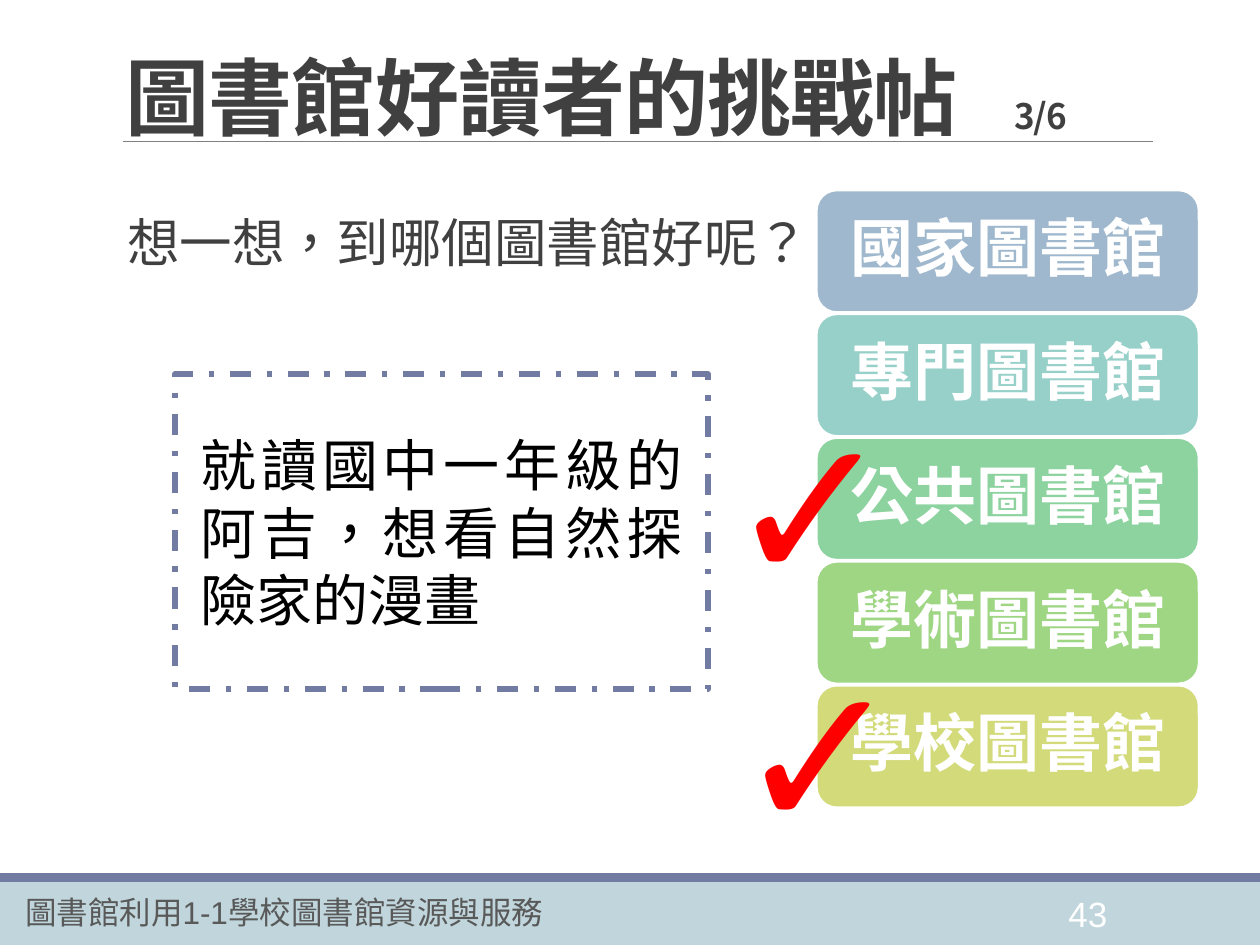
from pptx import Presentation
from pptx.dml.color import RGBColor
from pptx.enum import dml, shapes, text
from pptx.oxml.ns import qn
from pptx.util import Pt

WHITE = RGBColor(0xFF, 0xFF, 0xFF)
BLACK = RGBColor(0, 0, 0)
RED = RGBColor(0xFF, 0, 0)
INK = RGBColor(0x40, 0x40, 0x40)
FOOTER_INK = RGBColor(0x59, 0x59, 0x59)
RULE_GREY = RGBColor(0x80, 0x80, 0x80)
SLATE = RGBColor(0x72, 0x7C, 0xA3)
PALE_BLUE = RGBColor(0xC0, 0xD6, 0xDC)

SANS = "Arial"
CJK = "Noto Sans CJK SC"
INSETS = (7.2, 3.6, 7.2, 3.6)

LIBRARIES = [
    ("國家圖書館", RGBColor(0x9F, 0xB8, 0xCD)),
    ("專門圖書館", RGBColor(0x96, 0xD0, 0xC8)),
    ("公共圖書館", RGBColor(0x8D, 0xD3, 0xA0)),
    ("學術圖書館", RGBColor(0x9E, 0xD6, 0x84)),
    ("學校圖書館", RGBColor(0xD2, 0xDA, 0x7A)),
]
BUTTON_TOP, BUTTON_STEP = 108.7, 70.75
CHECK_MARKS = [(413.3, 355.7), (408.2, 213.8)]


def style_span(span, size, color, font=SANS, bold=False):
    span.font.size = Pt(size)
    span.font.color.rgb = color
    span.font.name = font
    span.font.bold = bold
    # Traditional Chinese punctuation sits in the middle of its square
    span.font._element.set("lang", "zh-TW")
    east_asian = span.font._element.makeelement(qn("a:ea"), {"typeface": font})
    span.font._element.find(qn("a:latin")).addnext(east_asian)


def fill_text(shape, words, size, color, font=SANS, bold=False, spacing=None,
              align=text.PP_ALIGN.LEFT, anchor=text.MSO_ANCHOR.TOP, insets=INSETS):
    frame = shape.text_frame
    frame.word_wrap = True
    frame.vertical_anchor = anchor
    (frame.margin_left, frame.margin_top,
     frame.margin_right, frame.margin_bottom) = map(Pt, insets)
    frame.text = words
    para = frame.paragraphs[0]
    para.alignment = align
    if spacing:
        para.line_spacing = spacing
    style_span(para.runs[0], size, color, font, bold)


def add_text(page, place, words, size, color, **options):
    box = page.shapes.add_textbox(*map(Pt, place))
    fill_text(box, words, size, color, **options)
    return box


def add_block(page, place, fill, kind=shapes.MSO_SHAPE.RECTANGLE, line=None, width=0):
    block = page.shapes.add_shape(kind, *map(Pt, place))
    block.shadow.inherit = False
    block.fill.solid()
    block.fill.fore_color.rgb = fill
    if line is None:
        block.line.fill.background()
    else:
        block.line.color.rgb = line
        block.line.width = Pt(width)
    return block


def add_rule(page, left, right, top):
    rule = page.shapes.add_connector(
        shapes.MSO_CONNECTOR.STRAIGHT, Pt(left), Pt(top), Pt(right), Pt(top))
    rule.line.color.rgb = RULE_GREY
    rule.line.width = Pt(0.5)
    properties = rule._element.spPr
    properties.append(properties.makeelement(qn("a:effectLst"), {}))


def add_title(page, words, counter):
    box = add_text(page, (64.8, 28.8, 594, 58.3), words, 48, INK, font=CJK, bold=True,
                   spacing=0.85, anchor=text.MSO_ANCHOR.BOTTOM)
    para = box.text_frame.paragraphs[0]
    # The tab stop sets the counter apart from the heading
    properties = para._p.get_or_add_pPr()
    tabs = properties.makeelement(qn("a:tabLst"), {})
    tabs.append(tabs.makeelement(qn("a:tab"), {"pos": str(Pt(507.6)), "algn": "l"}))
    properties.append(tabs)
    span = para.add_run()
    span.text = "\t" + counter
    style_span(span, 20, INK, CJK, True)
    for span in para.runs:
        span.font._element.set("spc", "-50")


def add_button(page, place, words, color):
    button = add_block(page, place, color, shapes.MSO_SHAPE.ROUNDED_RECTANGLE, WHITE, 1.25)
    fill_text(button, words, 36, WHITE, bold=True, spacing=0.9,
              align=text.PP_ALIGN.CENTER, anchor=text.MSO_ANCHOR.MIDDLE, insets=(10.8,) * 4)


def add_check(page, left, top):
    check = add_text(page, (left, top, 105.8, 146.9), "✓", 115, RED, bold=True)
    check.text_frame.word_wrap = False
    check.text_frame.auto_size = text.MSO_AUTO_SIZE.SHAPE_TO_FIT_TEXT


def main():
    deck = Presentation()
    deck.slide_width, deck.slide_height = Pt(720), Pt(540)
    page = deck.slides.add_slide(deck.slide_layouts[6])

    # Footer band
    add_block(page, (0, 504, 720, 36), PALE_BLUE)
    add_block(page, (0, 499, 720, 5), SLATE)
    add_text(page, (603.4, 506.2, 50.4, 28.8), "43", 20, WHITE)
    add_text(page, (7.2, 506.9, 334.8, 28.8), "圖書館利用1-1學校圖書館資源與服務", 18, FOOTER_INK)

    # Heading and question
    add_rule(page, 70.5, 659, 80.6)
    add_title(page, "圖書館好讀者的挑戰帖", "3/6")
    add_text(page, (65.5, 109.4, 375.1, 352.8), "想一想，到哪個圖書館好呢？", 30, INK,
             font=CJK, spacing=1.2, insets=(7.2, 3.6, 0, 3.6))

    # Library choices
    for row, (name, color) in enumerate(LIBRARIES):
        add_button(page, (466.6, BUTTON_TOP + row * BUTTON_STEP, 218.5, 69.8), name, color)

    # Reader's situation
    case = add_block(page, (100, 213.8, 304.6, 180), WHITE, line=SLATE, width=3)
    case.line.dash_style = dml.MSO_LINE.DASH_DOT
    fill_text(case, "就讀國中一年級的阿吉，想看自然探險家的漫畫", 32, BLACK, font=CJK,
              align=text.PP_ALIGN.JUSTIFY, anchor=text.MSO_ANCHOR.MIDDLE,
              insets=(14.4, 8.6, 14.4, 8.6))

    # Answers
    for left, top in CHECK_MARKS:
        add_check(page, left, top)

    deck.save("out.pptx")


if __name__ == "__main__":
    main()
